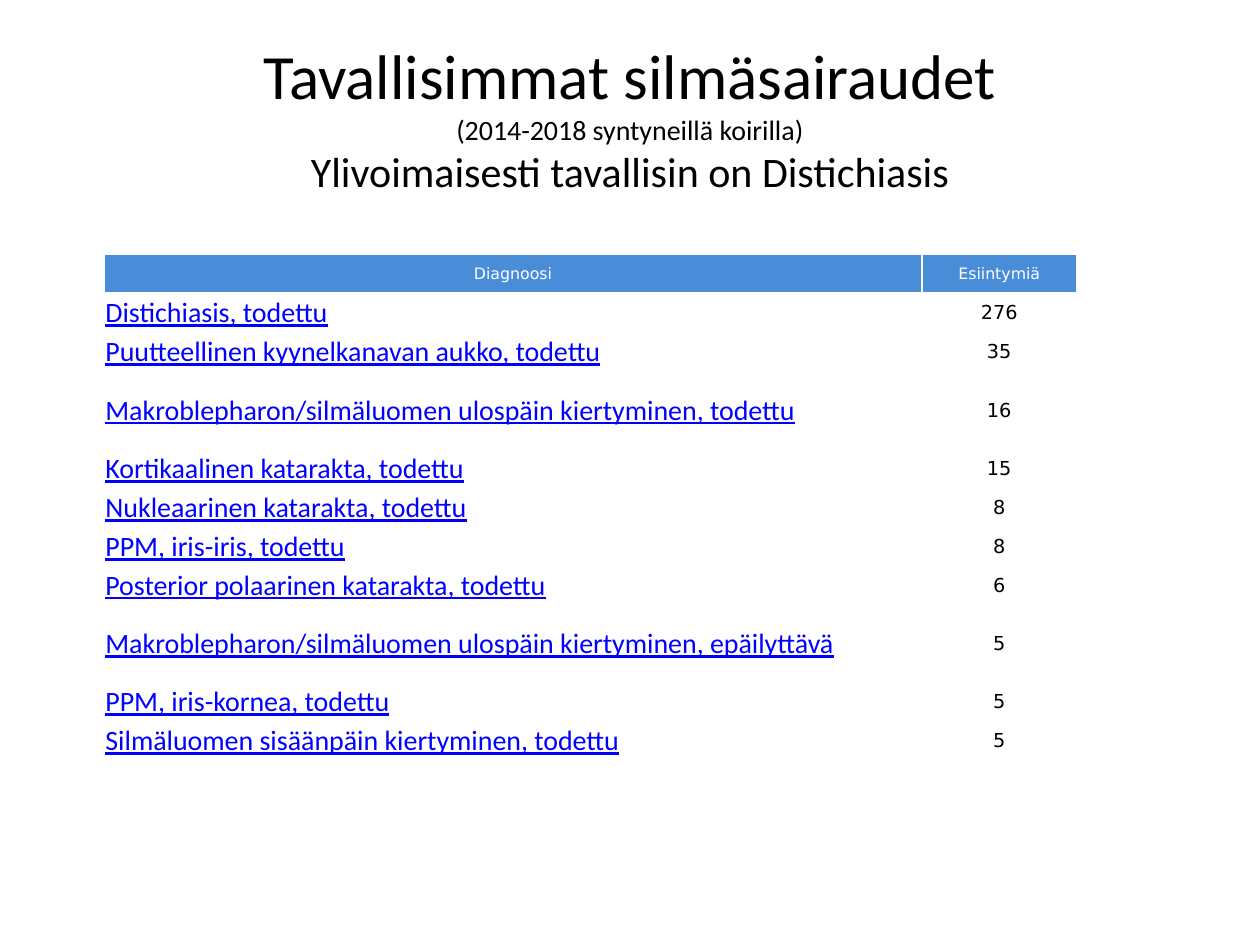
from pptx import Presentation
from pptx.dml.color import RGBColor
from pptx.enum.text import MSO_ANCHOR as Anchor, PP_ALIGN as Align
from pptx.util import Pt

DIAGNOSES = [
    ("Distichiasis, todettu", 276),
    ("Puutteellinen kyynelkanavan aukko, todettu", 35),
    ("Makroblepharon/silmäluomen ulospäin kiertyminen, todettu", 16),
    ("Kortikaalinen katarakta, todettu", 15),
    ("Nukleaarinen katarakta, todettu", 8),
    ("PPM, iris-iris, todettu", 8),
    ("Posterior polaarinen katarakta, todettu", 6),
    ("Makroblepharon/silmäluomen ulospäin kiertyminen, epäilyttävä", 5),
    ("PPM, iris-kornea, todettu", 5),
    ("Silmäluomen sisäänpäin kiertyminen, todettu", 5),
]
ROW_HEIGHT = 22.25


def color(value):
    return RGBColor.from_string(value)


class DiagnosisSlide:
    BODY_FONT = "Calibri"
    TABLE_FONT = "DejaVu Sans"
    BLACK = "000000"
    WHITE = "FFFFFF"
    HEADER = "498CD8"
    LINK = "0000FF"

    def __init__(self, deck):
        self.slide = deck.slides.add_slide(deck.slide_layouts[6])

    def style(self, run, size, font, shade, underline=False):
        run.font.size = Pt(size)
        run.font.name = font
        run.font.color.rgb = color(shade)
        run.font.underline = underline

    def title(self, left, top, width, height, lines, sizes):
        heading = self.slide.shapes.add_textbox(Pt(left), Pt(top), Pt(width), Pt(height))
        frame = heading.text_frame
        frame.word_wrap = True
        frame.vertical_anchor = Anchor.MIDDLE
        paragraph = frame.paragraphs[0]
        paragraph.text = "\v".join(lines)
        paragraph.alignment = Align.CENTER
        for run, size in zip(paragraph.runs, sizes):
            self.style(run, size, self.BODY_FONT, self.BLACK)

    def cell(self, cell, text, fill, align, *look):
        cell.fill.solid()
        cell.fill.fore_color.rgb = color(fill)
        cell.vertical_anchor = Anchor.MIDDLE
        cell.margin_left = cell.margin_right = cell.margin_top = Pt(0.75)
        cell.margin_bottom = Pt(0)
        paragraph = cell.text_frame.paragraphs[0]
        paragraph.text = text
        paragraph.alignment = align
        self.style(paragraph.runs[0], *look)

    def table(self, left, top, widths, headers, entries):
        heights = [ROW_HEIGHT] + [
            ROW_HEIGHT * (2 if name.startswith("Makroblepharon") else 1)
            for name, _ in entries
        ]
        table = self.slide.shapes.add_table(
            len(heights), len(widths), Pt(left), Pt(top), Pt(sum(widths)), Pt(sum(heights))
        ).table
        for column, width in zip(table.columns, widths):
            column.width = Pt(width)
        for row, height in zip(table.rows, heights):
            row.height = Pt(height)
        for column, header in enumerate(headers):
            self.cell(table.cell(0, column), header, self.HEADER, Align.CENTER,
                      9, self.TABLE_FONT, self.WHITE)
        for row, (name, count) in enumerate(entries, 1):
            self.cell(table.cell(row, 0), name, self.WHITE, Align.LEFT,
                      16, self.BODY_FONT, self.LINK, True)
            self.cell(table.cell(row, 1), str(count), self.WHITE, Align.CENTER,
                      11, self.TABLE_FONT, self.BLACK)


def main():
    deck = Presentation()
    deck.slide_width, deck.slide_height = Pt(720), Pt(540)
    page = DiagnosisSlide(deck)
    page.title(
        36, 21.6, 648, 90,
        ["Tavallisimmat silmäsairaudet", "(2014-2018 syntyneillä koirilla)",
         "Ylivoimaisesti tavallisin on Distichiasis"],
        [36, 16, 24],
    )
    page.table(59.5, 145.25, [467.25, 88.5], ["Diagnoosi", "Esiintymiä"], DIAGNOSES)
    deck.save("out.pptx")


if __name__ == "__main__":
    main()
